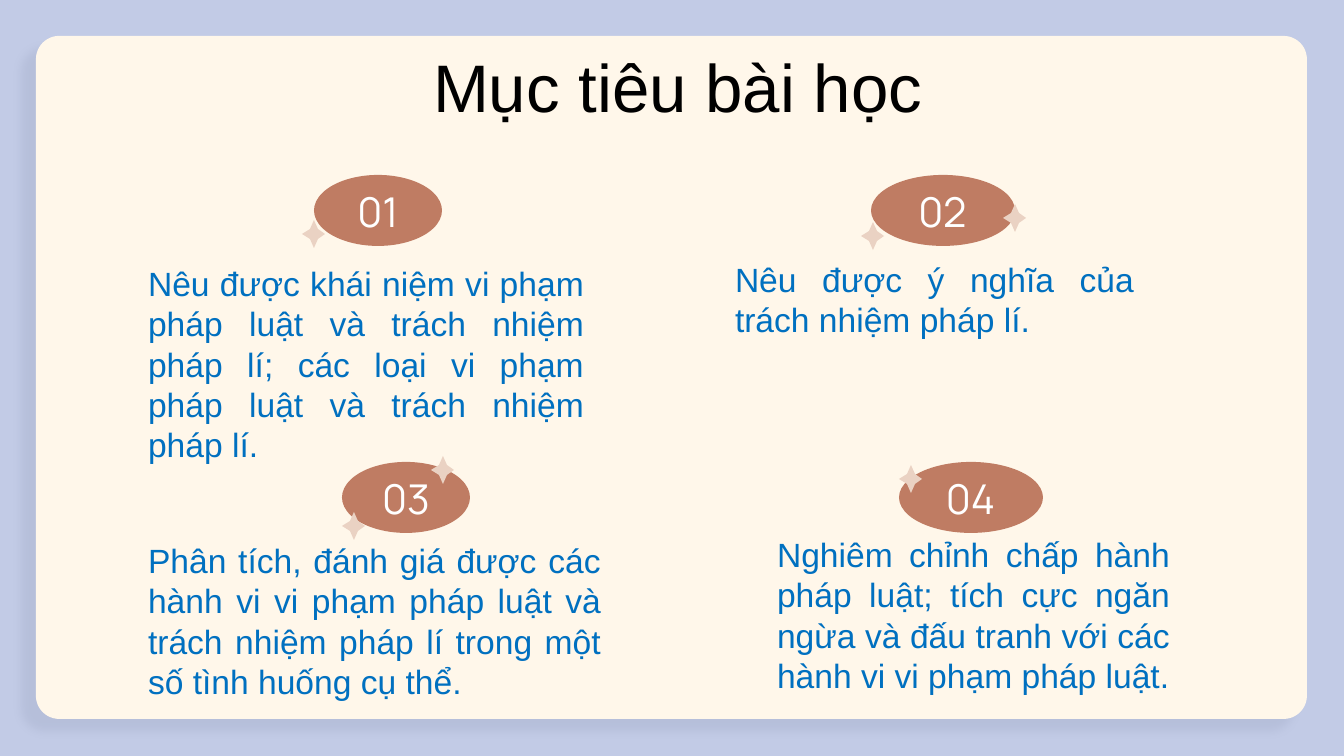
import pptx
import pptx.util
import pptx.dml.color
import pptx.enum.shapes
import pptx.enum.text
import pptx.oxml
import pptx.oxml.ns

SHAPES = pptx.enum.shapes.MSO_SHAPE
ALIGN = pptx.enum.text.PP_ALIGN
ANCHOR = pptx.enum.text.MSO_ANCHOR
FIT = pptx.enum.text.MSO_AUTO_SIZE

SCALE = 914400 / 134.4  # EMU per px
COLOURS = {
    "background": "C2CBE6", "panel": "FFF7EA", "shadow": "515B7A",
    "badge": "BF7C63", "star": "EAD2C3",
    "title": "000000", "number": "FFFFFF", "goal": "0070C0",
}
FONTS = {"title": ("Arial", 36), "number": ("Manrope", 22), "goal": ("Arial", 18)}
STAR = [(12, 0), (8, 9), (0, 14), (8, 19), (12, 28), (16, 19), (23, 14), (16, 9)]


def px(length):
    return pptx.util.Emu(round(length * SCALE))


def rgb(name):
    return pptx.dml.color.RGBColor.from_string(COLOURS[name])


def apply(target, values):
    for name, value in values.items():
        setattr(target, name, value)


class Page:
    """Holds the style and the current slide."""

    def __init__(self, slide):
        self.slide = slide
        slide.background.fill.solid()
        slide.background.fill.fore_color.rgb = rgb("background")

    def paint(self, shape, colour):
        shape.shadow.inherit = False
        shape.fill.solid()
        shape.fill.fore_color.rgb = rgb(colour)
        shape.line.fill.background()
        return shape

    def shape(self, kind, box, colour):
        return self.paint(self.slide.shapes.add_shape(kind, *map(px, box)), colour)

    def panel(self, box):
        panel = self.shape(SHAPES.ROUNDED_RECTANGLE, box, "panel")
        panel.adjustments[0] = 0.034
        effects = panel._element.spPr.find(pptx.oxml.ns.qn("a:effectLst"))
        effects.append(pptx.oxml.parse_xml(
            f'<a:outerShdw {pptx.oxml.ns.nsdecls("a")} blurRad="57150" dist="133350" '
            f'dir="8220000" algn="bl" rotWithShape="0"><a:srgbClr val="{COLOURS["shadow"]}">'
            '<a:alpha val="10000"/></a:srgbClr></a:outerShdw>'))
        # Behind the placeholders
        self.slide.shapes._spTree.insert(2, panel._element)

    def star(self, left, top):
        builder = self.slide.shapes.build_freeform(*STAR[0], scale=SCALE)
        builder.add_line_segments(STAR[1:], close=True)
        self.paint(builder.convert_to_shape(px(left), px(top)), "star")

    def text(self, holder, box, words, style, align, inset=(13, 6),
             anchor=ANCHOR.TOP, fit=FIT.SHAPE_TO_FIT_TEXT, indents=(0, 0)):
        apply(holder, dict(zip(("left", "top", "width", "height"), map(px, box))))
        frame = holder.text_frame
        side, edge = map(px, inset)
        apply(frame, {
            "word_wrap": True, "auto_size": fit, "vertical_anchor": anchor,
            "margin_left": side, "margin_right": side,
            "margin_top": edge, "margin_bottom": edge, "text": words,
        })
        paragraph = frame.paragraphs[0]
        apply(paragraph, {"alignment": align, "line_spacing": 1.0,
                          "space_before": pptx.util.Pt(0)})
        properties = paragraph._p.get_or_add_pPr()
        for name, length in zip(("marL", "marR", "indent"), (*indents, 0)):
            properties.set(name, str(px(length)))
        properties.append(pptx.oxml.parse_xml(
            f'<a:buNone {pptx.oxml.ns.nsdecls("a")}/>'))
        font = paragraph.runs[0].font
        family, size = FONTS[style]
        apply(font, {"name": family, "size": pptx.util.Pt(size), "bold": False})
        font.color.rgb = rgb(style)

    def badge(self, box, number, number_width):
        left, top, width, _ = box
        self.shape(SHAPES.OVAL, box, "badge")
        number_box = (left + (width - number_width) // 2, top + 15, number_width, 42)
        holder = self.slide.shapes.add_textbox(0, 0, 0, 0)
        self.text(holder, number_box, number, "number", ALIGN.CENTER,
                  inset=(0, 0), anchor=ANCHOR.MIDDLE, fit=FIT.NONE)


def main():
    deck = pptx.Presentation()
    deck.slide_width, deck.slide_height = px(1344), px(756)
    page = Page(deck.slides.add_slide(deck.slide_layouts.get_by_name("Comparison")))
    holders = page.slide.placeholders

    # Panel and title
    page.panel((36, 36, 1271, 683))
    page.text(holders[0], (420, 39, 551, 95), "Mục tiêu bài học", "title", ALIGN.LEFT)

    # Lesson goals
    goals = [
        ((-117, 257, 761, 218), "Nêu được khái niệm vi phạm pháp luật và trách nhiệm "
         "pháp lí; các loại vi phạm pháp luật và trách nhiệm pháp lí."),
        ((470, 253, 724, 95), "Nêu được ý nghĩa của trách nhiệm pháp lí."),
        ((-117, 534, 778, 176), "Phân tích, đánh giá được các hành vi vi phạm pháp luật "
         "và trách nhiệm pháp lí trong một số tình huống cụ thể."),
        ((512, 528, 718, 176), "Nghiêm chỉnh chấp hành pháp luật; tích cực ngăn ngừa "
         "và đấu tranh với các hành vi vi phạm pháp luật."),
    ]
    columns = [(314, 128, 78), (871, 144, 87)]  # left, badge width, number width
    for index, (box, goal) in enumerate(goals):
        row, column = divmod(index, 2)
        left, width, number_width = columns[column]
        page.badge((left + 28 * row, 175 + 287 * row, width, 71),
                   f"{index + 1:02}", number_width)
        page.text(holders[index + 1], box, goal, "goal", ALIGN.JUSTIFY,
                  indents=(252, 47))

    # Sparkles around the badges
    for left, top in [(1003, 204), (861, 222), (431, 456),
                      (342, 512), (302, 220), (899, 465)]:
        page.star(left, top)

    deck.save("out.pptx")


if __name__ == "__main__":
    main()
